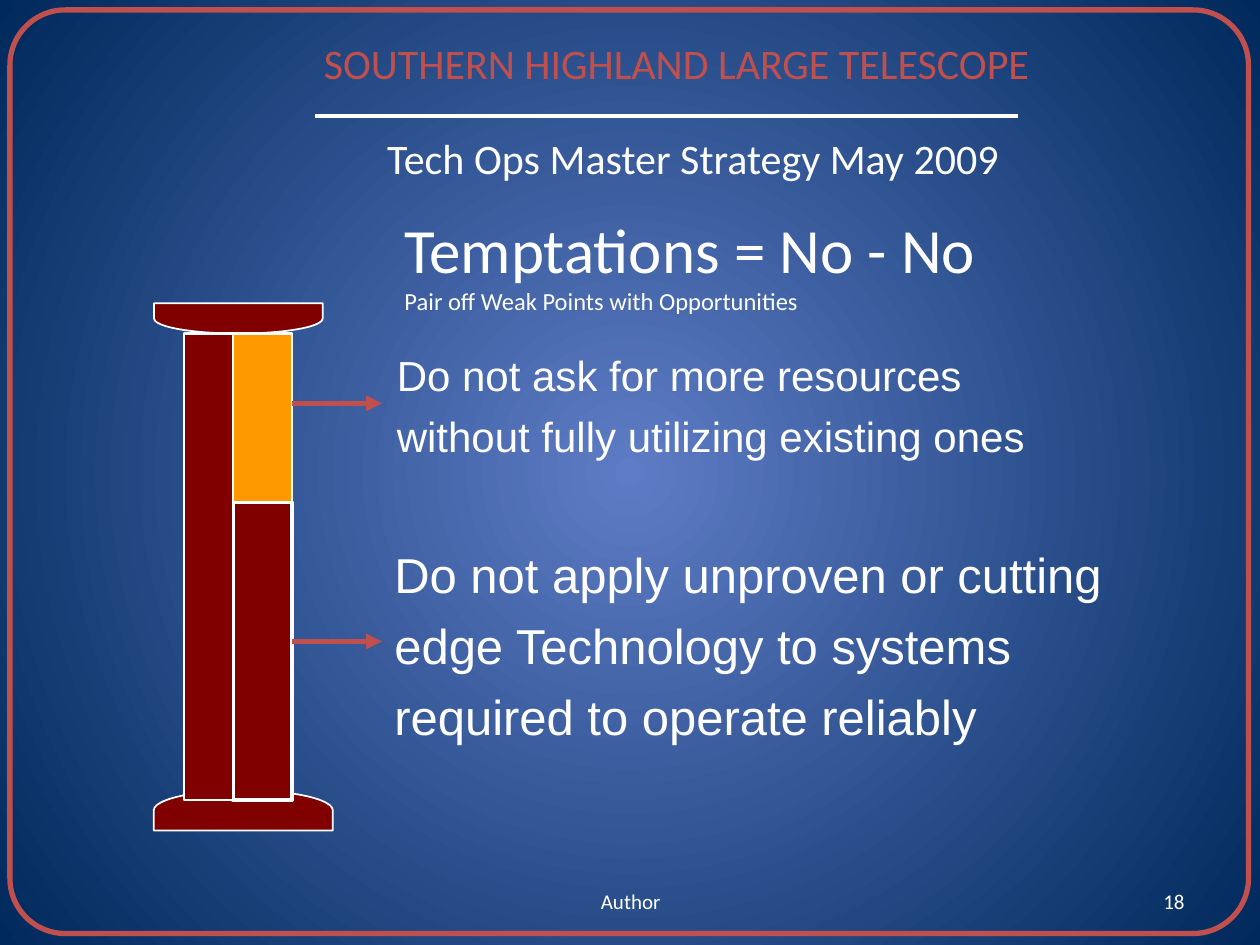
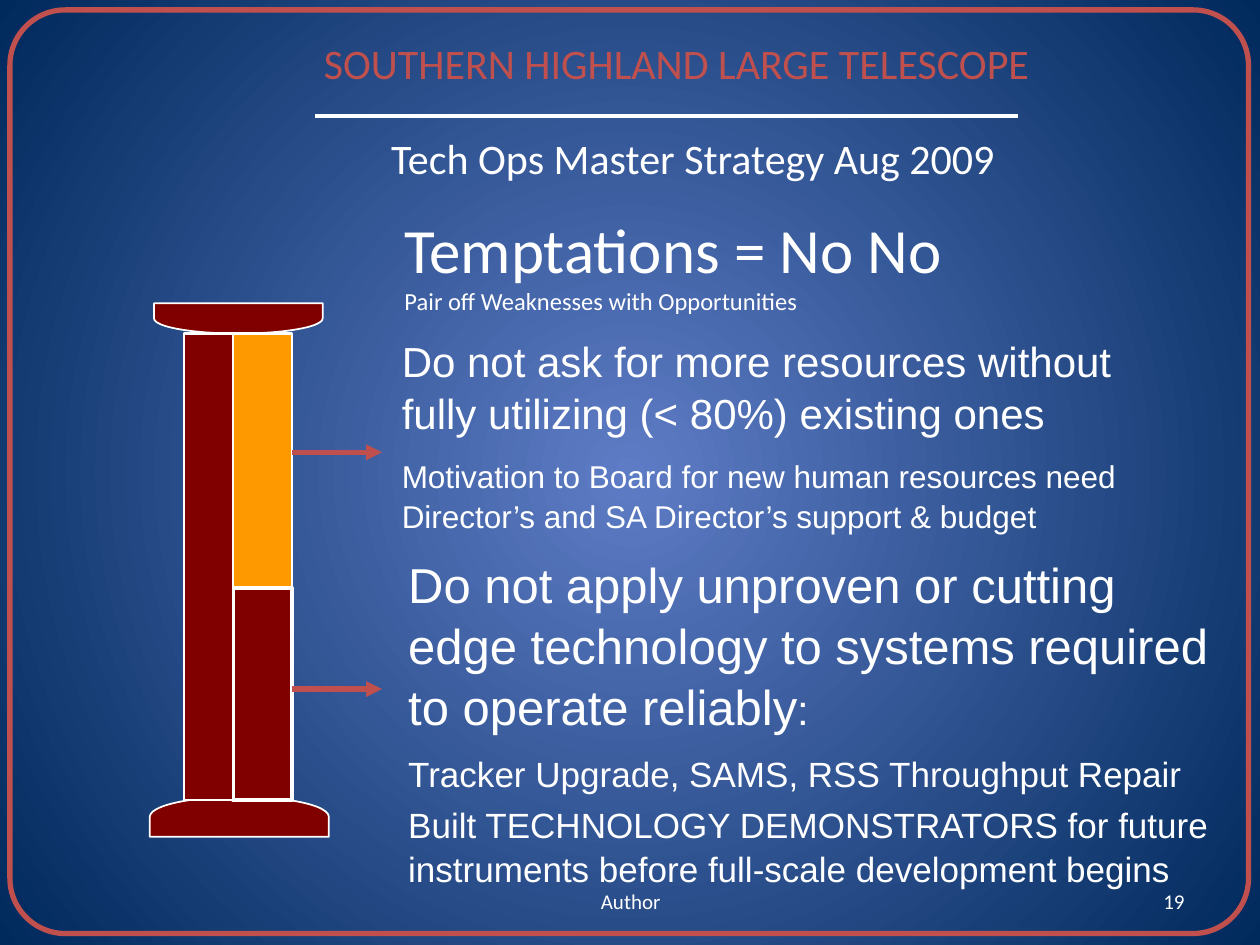
from dataclasses import dataclass

from lxml import etree
from pptx import Presentation
from pptx.dml.color import RGBColor
from pptx.enum.shapes import MSO_CONNECTOR, MSO_SHAPE
from pptx.enum.text import MSO_ANCHOR, MSO_AUTO_SIZE, PP_ALIGN
from pptx.oxml import parse_xml
from pptx.oxml.ns import nsdecls, qn
from pptx.util import Cm, Pt


@dataclass(frozen=True)
class Theme:
    # Colours
    glow: str = "5E7CC5"
    night: str = "00295C"
    accent: str = "C0504D"
    white: str = "FFFFFF"
    maroon: str = "800000"
    orange: str = "FF9900"
    # Fonts and type sizes
    head_font: str = "Calibri"
    body_font: str = "Arial"
    heading: int = 36
    large: int = 28
    band: int = 24
    detail: int = 20
    note: int = 18
    caption: int = 14
    footer: int = 12


def rgb(value):
    return RGBColor.from_string(value)


def cm(*values):
    return [Cm(v) for v in values]


class Deck:
    """Holds the style and the current slide."""

    def __init__(self, theme):
        self.theme = theme
        self.prs = Presentation()
        self.prs.slide_width, self.prs.slide_height = cm(25.4, 19.05)
        self.s = None
        self.paint_master()

    def paint_master(self):
        master = self.prs.slide_master
        fill = master.background.fill
        fill.gradient()
        colours = (self.theme.glow, self.theme.night)
        for position, (stop, colour) in enumerate(zip(fill.gradient_stops, colours)):
            stop.position = position
            stop.color.rgb = rgb(colour)
        # Radial gradient from the centre of the slide
        grad = master.element.find(".//" + qn("a:gradFill"))
        for lin in grad.findall(qn("a:lin")):
            grad.remove(lin)
        grad.append(parse_xml(
            f'<a:path {nsdecls("a")} path="circle">'
            '<a:fillToRect l="50000" t="50000" r="50000" b="50000"/></a:path>'))

    def new_slide(self):
        self.s = self.prs.slides.add_slide(self.prs.slide_layouts[0])

    def fill_text(self, sp, paragraphs, font=None, color=None, align=PP_ALIGN.LEFT,
                  anchor=MSO_ANCHOR.TOP, leading=None):
        """Each paragraph is (space before, [(text, size), ...])."""
        tf = sp.text_frame
        frame = {"word_wrap": True, "auto_size": MSO_AUTO_SIZE.NONE,
                 "vertical_anchor": anchor}
        for name, value in frame.items():
            setattr(tf, name, value)
        for i, (before, runs) in enumerate(paragraphs):
            p = tf.paragraphs[0] if i == 0 else tf.add_paragraph()
            layout = {"alignment": align, "space_before": Pt(before),
                      "line_spacing": leading}
            for name, value in layout.items():
                setattr(p, name, value)
            for text, size in runs:
                r = p.add_run()
                r.text = text
                style = {"name": font or self.theme.head_font, "size": Pt(size)}
                for name, value in style.items():
                    setattr(r.font, name, value)
                r.font.color.rgb = rgb(color or self.theme.white)

    def text(self, box, paragraphs, **style):
        self.fill_text(self.s.shapes.add_textbox(*cm(*box)), paragraphs, **style)

    def placeholder(self, index, box, paragraphs, **style):
        sp = self.s.placeholders[index]
        sp.left, sp.top, sp.width, sp.height = cm(*box)
        self.fill_text(sp, paragraphs, **style)

    def shape(self, kind, box, line, width, fill=None, rotation=0):
        sp = self.s.shapes.add_shape(kind, *cm(*box))
        sp.shadow.inherit = False
        sp.rotation = rotation
        if fill:
            sp.fill.solid()
            sp.fill.fore_color.rgb = rgb(fill)
        else:
            sp.fill.background()
        sp.line.color.rgb = rgb(line)
        sp.line.width = Pt(width)
        return sp

    def line(self, x1, x2, y, color, width, arrow=False):
        sp = self.s.shapes.add_connector(MSO_CONNECTOR.STRAIGHT, *cm(x1, y, x2, y))
        sp.line.color.rgb = rgb(color)
        sp.line.width = Pt(width)
        spPr = sp.element.spPr
        if arrow:
            etree.SubElement(spPr.find(qn("a:ln")), qn("a:tailEnd"), type="triangle")
        etree.SubElement(spPr, qn("a:effectLst"))

    # Frame, header band and footer shared by all slides
    def furniture(self, number):
        t = self.theme
        self.text((4.65, 0.64, 17.98, 1.27),
                  [(0, [("SOUTHERN HIGHLAND LARGE TELESCOPE", t.band)])],
                  color=t.accent, align=PP_ALIGN.CENTER)
        self.line(6.35, 20.52, 2.34, t.white, 2)
        frame = self.shape(MSO_SHAPE.ROUNDED_RECTANGLE, (0.2, 0.2, 24.97, 18.62),
                           t.accent, 3)
        frame.adjustments[0] = 0.06
        for left, width, label, align in (
                (8.69, 8.05, "Author", PP_ALIGN.CENTER),
                (18.21, 5.92, str(number), PP_ALIGN.RIGHT)):
            self.text((left, 17.65, width, 1.02), [(0, [(label, t.footer)])],
                      align=align, anchor=MSO_ANCHOR.MIDDLE)

    def headings(self, strategy, title, caption):
        t = self.theme
        self.placeholder(1, (5.08, 2.54, 17.78, 1.27), lines(t.band, strategy),
                         align=PP_ALIGN.CENTER)
        self.placeholder(0, (7.9, 4.11, 14.81, 2.39),
                         [(0, [(title, t.heading)]), (0, [(caption, t.caption)])])

    # Pillar with capital, base, shaft and a two-part side
    def pillar(self, split, base, arrows):
        t = self.theme
        top, height, side, edge = 6.73, 9.4, 4.7, 5.89
        for box, rotation in (((4.5, 4.72, 0.61, 3.4), 90),
                              ((*base, 0.81, 3.61), 270)):
            self.shape(MSO_SHAPE.FLOWCHART_DELAY, box, t.white, 1, t.maroon, rotation)
        width = edge - side
        for box, fill, weight in (
                ((side, top, width, split), t.orange, 1.5),
                ((side, top + split, width, height - split), t.maroon, 2.25),
                ((3.71, top, side - 3.71, height), t.maroon, 1.5)):
            self.shape(MSO_SHAPE.RECTANGLE, box, t.white, weight, fill)
        for y in arrows:
            self.line(edge, 7.7, y, t.accent, 3, arrow=True)

    def points(self, box, paragraphs):
        self.text(box, paragraphs, font=self.theme.body_font, leading=1.04)


def lines(size, *texts):
    return [(size * 0.2, [(text, size)]) for text in texts]


def main():
    t = Theme()
    deck = Deck(t)

    # Slide 18: May strategy
    deck.new_slide()
    deck.furniture(18)
    deck.headings("Tech Ops Master Strategy May 2009", "Temptations = No - No",
                  "Pair off Weak Points with Opportunities")
    deck.pillar(3.4, (4.5, 14.53), (8.13, 12.93))
    deck.points((7.75, 6.88, 13.6, 2.51),
                lines(t.band, "Do not ask for more resources",
                      "without fully utilizing existing ones"))
    deck.points((7.7, 10.8, 15.2, 4.32),
                lines(t.large, "Do not apply unproven or cutting",
                      "edge Technology to systems", "required to operate reliably"))

    # Slide 19: August strategy
    deck.new_slide()
    deck.furniture(19)
    deck.headings("Tech Ops Master Strategy Aug 2009", "Temptations = No No",
                  "Pair off Weaknesses with Opportunities")
    deck.pillar(5.13, (4.42, 14.66), (9.12, 13.89))
    deck.points((7.85, 6.6, 15.7, 4.32), [
        *lines(t.band, "Do not ask for more resources without fully utilizing "
                       "(< 80%) existing ones"),
        (10, [("Motivation to Board for new human resources need Director’s "
               "and SA Director’s support & budget", t.note)]),
    ])
    deck.points((7.98, 11, 16.8, 6.96), [
        (5.6, [("Do not apply unproven or cutting edge technology to systems "
                "required to operate reliably", t.large), (":", t.band)]),
        (9, [("Tracker Upgrade, SAMS, RSS Throughput Repair", t.detail)]),
        *lines(t.detail, "Built TECHNOLOGY DEMONSTRATORS for future instruments "
                         "before full-scale development begins"),
    ])

    deck.prs.save("out.pptx")


if __name__ == "__main__":
    main()
